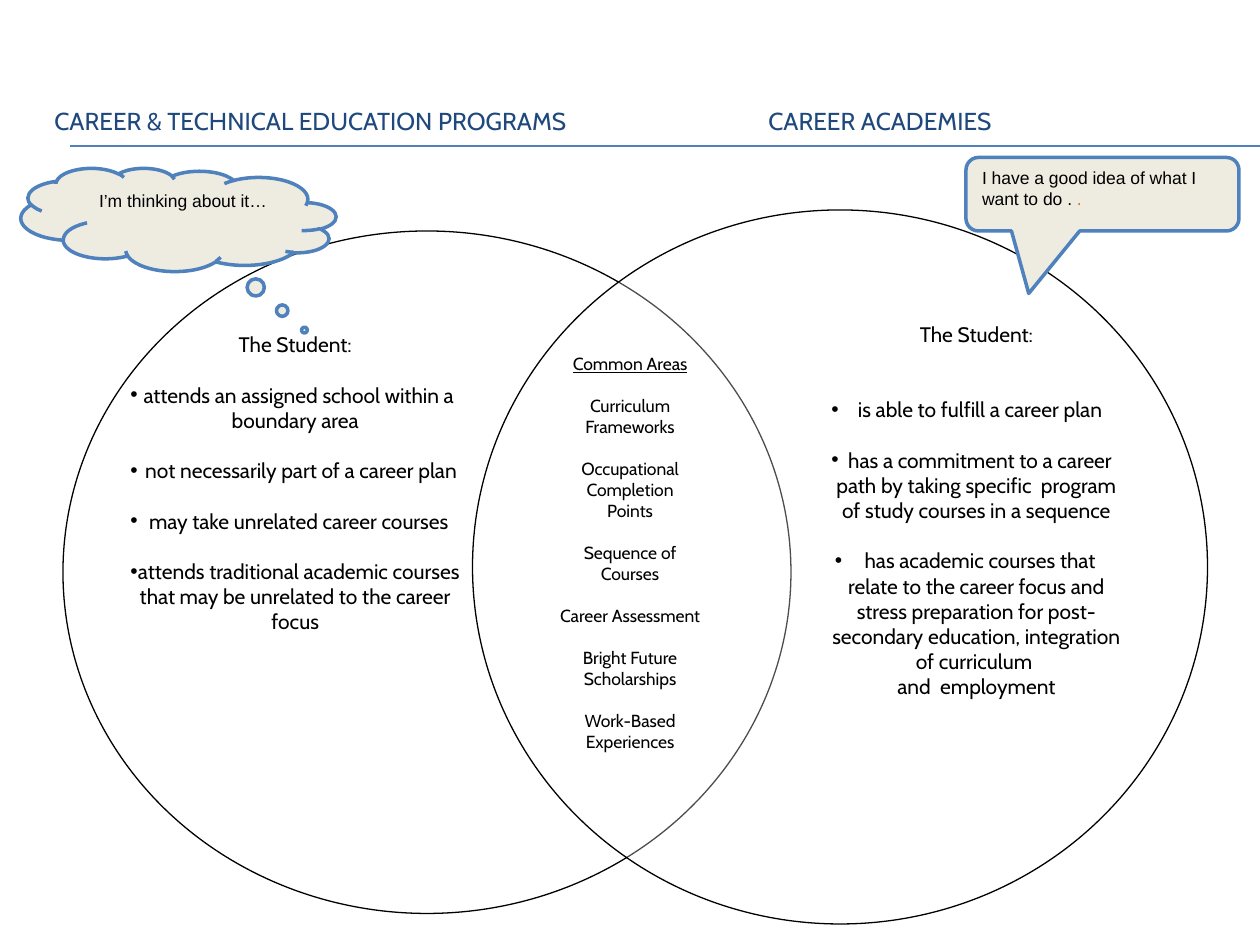
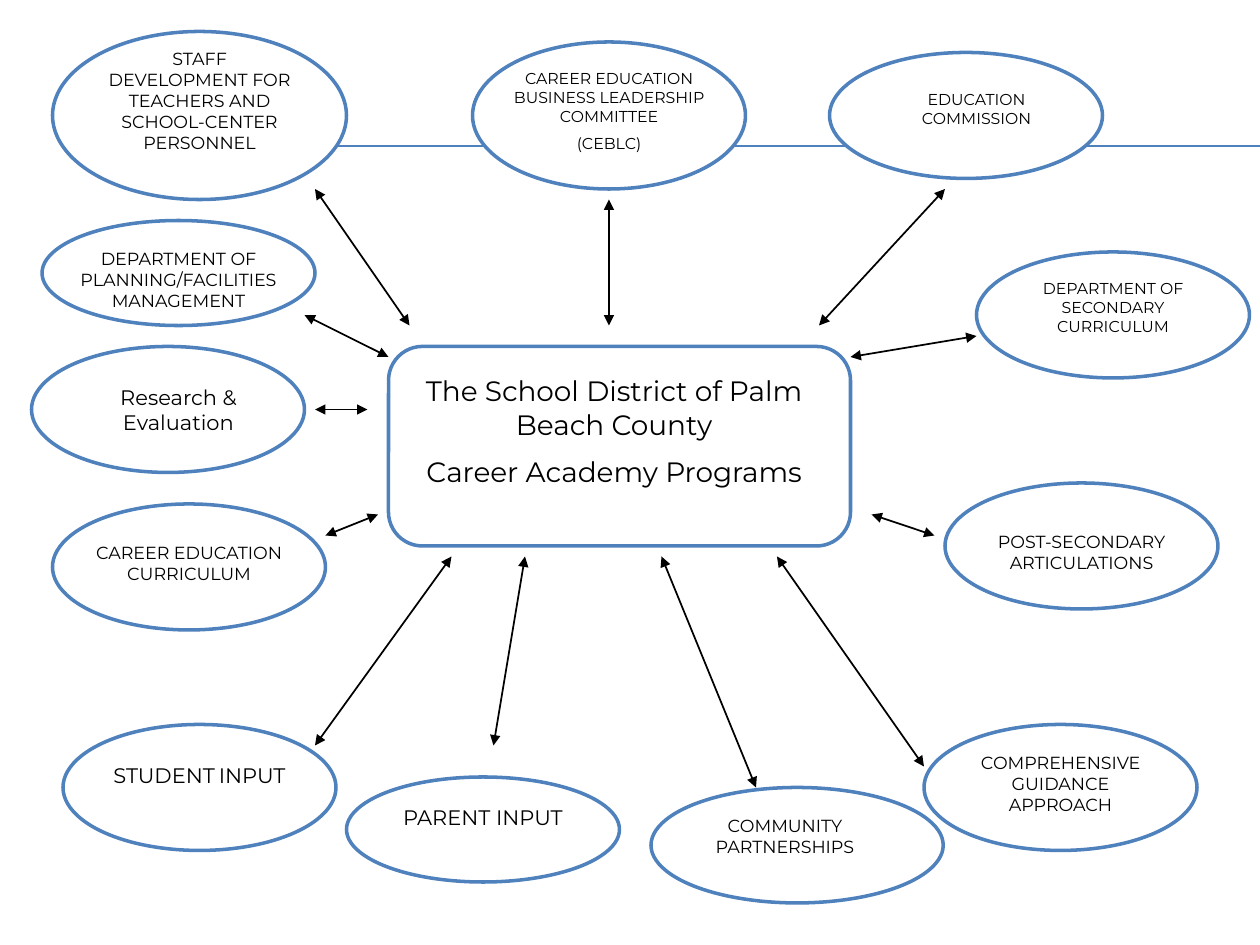
import pptx
import pptx.util
import pptx.dml.color
import pptx.enum.shapes
import pptx.enum.text
import pptx.oxml
import pptx.oxml.ns

Pt = pptx.util.Pt
RGBColor = pptx.dml.color.RGBColor
SHAPE = pptx.enum.shapes.MSO_SHAPE
ALIGN = pptx.enum.text.PP_ALIGN
ANCHOR = pptx.enum.text.MSO_ANCHOR

BLACK = RGBColor(0x00, 0x00, 0x00)
WHITE = RGBColor(0xFF, 0xFF, 0xFF)
BLUE = RGBColor(0x4F, 0x81, 0xBD)
NAVY = RGBColor(0x1F, 0x49, 0x7D)
CREAM = RGBColor(0xEE, 0xEC, 0xE1)
ORANGE = RGBColor(0xFF, 0x66, 0x00)

SLIDE_SIZE = (720, 540)
RULES = [(40, 83, 720, 83), (40, 83.5, 720, 83.5)]
STUDENT_GAP = 14.4
COMMON_GAP = 12

HEADINGS = [
    ("CAREER & TECHNICAL EDUCATION PROGRAMS", (24, 36, 684, 66)),
    ("CAREER ACADEMIES", (432, 36, 144, 66)),
]
CIRCLES = [((36, 132, 416, 390), 20), ((270, 120, 420, 408), 30)]

PROGRAM_STUDENT = [
    ("The Student:", 0, False),
    ("attends an assigned school within a boundary area", STUDENT_GAP, True),
    (" not necessarily part of a career plan", STUDENT_GAP, True),
    ("may take unrelated career courses", STUDENT_GAP, True),
    ("attends traditional academic courses that may be unrelated to the career focus",
     STUDENT_GAP, True),
]
ACADEMY_STUDENT = [
    ("The Student:", 0, False),
    ("is able to fulfill a career plan", 2 * STUDENT_GAP, True),
    ("has a commitment to a career path by taking specific  program of study "
     "courses in a sequence", STUDENT_GAP, True),
    ("has academic courses that relate to the career focus and stress preparation "
     "for post-secondary education, integration of curriculum ", STUDENT_GAP, True),
    ("and  employment", 0, False),
]
COMMON_AREAS = [
    ([("Common Areas", {"underline": True})], 0, False),
    ("Curriculum Frameworks", COMMON_GAP, False),
    ("Occupational Completion", COMMON_GAP, False),
    ("Points", 0, False),
    ("Sequence of Courses", COMMON_GAP, False),
    ("Career Assessment", COMMON_GAP, False),
    ("Bright Future Scholarships", COMMON_GAP, False),
    ("Work-Based Experiences", COMMON_GAP, False),
]
VENN_TEXTS = [
    (PROGRAM_STUDENT, (67.5, 186, 202.5, 276), 12),
    (ACADEMY_STUDENT, (468, 180, 180, 360), 12),
    (COMMON_AREAS, (312, 198, 96, 306), 10),
]
THOUGHT = [("I’m thinking about it…", 0, False)]
SPEECH = [([("I have a good idea of what I want to do .", {}),
            (" .", {"color": ORANGE})], 0, False)]

HUB_BOX = (222, 198, 264, 114)
HUB_TEXT = (["The School District of Palm Beach County", "Career Academy Programs"],
            (234, 210, 234, 94), 16)
STUDENT_INPUT = [("STUDENT", {}), (" ", {"size": Pt(8)}), ("INPUT", {})]
PARTNERS = [
    (["STAFF DEVELOPMENT FOR TEACHERS AND SCHOOL-CENTER PERSONNEL"],
     (30, 18, 168, 96), (54, 24, 120, 79), 10),
    (["CAREER EDUCATION BUSINESS LEADERSHIP COMMITTEE", "(CEBLC)"],
     (270, 24, 156, 84), (282, 36, 132, 66), 9),
    (["EDUCATION COMMISSION"], (474, 30, 156, 72), (498, 48, 120, 29), 9),
    (["DEPARTMENT OF PLANNING/FACILITIES MANAGEMENT"],
     (24, 126, 156, 60), (30, 138, 144, 43), 10),
    (["Research & Evaluation"], (18, 198, 156, 72), (30, 216, 144, 36), 12),
    (["CAREER EDUCATION CURRICULUM"], (30, 288, 156, 72), (42, 306, 132, 31), 10),
    ([STUDENT_INPUT], (36, 414, 156, 72), (54, 432, 120, 36), 12),
    (["PARENT INPUT"], (198, 444, 156, 60), (216, 456, 120, 22), 12),
    (["DEPARTMENT OF SECONDARY CURRICULUM"],
     (558, 144, 156, 72), (576, 156, 120, 40), 9),
    (["POST-SECONDARY ARTICULATIONS"], (540, 276, 156, 72), (558, 300, 120, 31), 10),
    (["COMPREHENSIVE GUIDANCE APPROACH"],
     (528, 414, 156, 72), (546, 426, 120, 43), 10),
    (["COMMUNITY PARTNERSHIPS"], (372, 450, 167, 66), (384, 462, 129, 31), 10),
]
ARROWS = [
    (180, 108, 234, 186), (348, 114, 348, 186), (540, 108, 468, 186),
    (174, 180, 222, 204), (180, 234, 210, 234), (216, 294, 186, 306),
    (258, 318, 180, 426), (300, 318, 282, 426), (378, 318, 432, 450),
    (444, 318, 528, 438), (498, 294, 534, 306), (486, 204, 558, 192),
]


def points(values):
    return [Pt(value) for value in values]


def add_element(parent, tag, **attributes):
    element = pptx.oxml.parse_xml(f"<a:{tag} {pptx.oxml.ns.nsdecls('a')}/>")
    for name, value in attributes.items():
        element.set(name, value)
    parent.append(element)


def format_font(font, values):
    for name, value in values.items():
        if name == "color":
            font.color.rgb = value
        else:
            setattr(font, name, value)


def write_text(frame, paragraphs, font_name, size, color=BLACK,
               align=ALIGN.CENTER, anchor=ANCHOR.TOP):
    frame.word_wrap = True
    frame.vertical_anchor = anchor
    base = {"name": font_name, "size": Pt(size), "color": color}
    for index, (content, gap, bulleted) in enumerate(paragraphs):
        paragraph = frame.add_paragraph() if index else frame.paragraphs[0]
        paragraph.alignment = align
        paragraph.space_before = Pt(gap)
        if bulleted:
            properties = paragraph._p.get_or_add_pPr()
            add_element(properties, "buFont", typeface="Arial")
            add_element(properties, "buChar", char="•")
        runs = [(content, {})] if isinstance(content, str) else content
        for text, changes in runs:
            run = paragraph.add_run()
            run.text = text
            format_font(run.font, {**base, **changes})


def add_text(slide, box, *arguments, **options):
    frame = slide.shapes.add_textbox(*points(box)).text_frame
    write_text(frame, *arguments, **options)
    return frame


def add_outline(slide, kind, box, fill=WHITE, line=BLUE, width=2, adjustments=()):
    shape = slide.shapes.add_shape(kind, *points(box))
    shape.shadow.inherit = False
    shape.fill.solid()
    shape.fill.fore_color.rgb = fill
    shape.line.color.rgb = line
    shape.line.width = Pt(width)
    for index, value in enumerate(adjustments):
        shape.adjustments[index] = value
    return shape


def add_line(slide, ends, color, width, arrows=False):
    connector = slide.shapes.add_connector(
        pptx.enum.shapes.MSO_CONNECTOR.STRAIGHT, *points(ends))
    connector.line.color.rgb = color
    connector.line.width = Pt(width)
    if arrows:
        for tag in ("headEnd", "tailEnd"):
            add_element(connector.line._ln, tag, type="triangle")
    add_element(connector._element.spPr, "effectLst")


def add_slide(presentation):
    slide = presentation.slides.add_slide(presentation.slide_layouts[6])
    for ends in RULES:
        add_line(slide, ends, BLUE, 0.75)
    return slide


def add_circle(slide, box, opacity):
    circle = add_outline(slide, SHAPE.OVAL, box, line=BLACK, width=0.75)
    color = circle.fill._xPr.find(".//" + pptx.oxml.ns.qn("a:srgbClr"))
    add_element(color, "alpha", val=str(opacity * 1000))


def build_venn(presentation):
    slide = add_slide(presentation)
    add_circle(slide, *CIRCLES[0])
    cloud = add_outline(slide, SHAPE.CLOUD_CALLOUT, (12, 96, 180, 59), CREAM,
                        adjustments=(-0.4, 1.07))
    cloud._element.spPr.xfrm.set("flipH", "1")
    write_text(cloud.text_frame, THOUGHT, "Arial", 10, align=ALIGN.LEFT)
    add_circle(slide, *CIRCLES[1])
    for paragraphs, box, size in VENN_TEXTS:
        add_text(slide, box, paragraphs, "Cabin", size)
    speech = add_outline(slide, SHAPE.ROUNDED_RECTANGULAR_CALLOUT, (552, 90, 156, 42),
                         CREAM, adjustments=(-0.27, 1.35, 0.17))
    write_text(speech.text_frame, SPEECH, "Arial", 10, align=ALIGN.LEFT)
    for heading, box in HEADINGS:
        add_text(slide, box, [(heading, 0, False)], "Cabin", 14, NAVY,
                 ALIGN.LEFT, ANCHOR.MIDDLE)


def build_partners(presentation):
    slide = add_slide(presentation)
    add_outline(slide, SHAPE.ROUNDED_RECTANGLE, HUB_BOX, adjustments=(0.17,))
    for _, oval, _, _ in PARTNERS:
        add_outline(slide, SHAPE.OVAL, oval)
    for ends in ARROWS:
        add_line(slide, ends, BLACK, 1, arrows=True)
    labels = [(lines, box, size) for lines, _, box, size in PARTNERS]
    for lines, box, size in labels + [HUB_TEXT]:
        paragraphs = [(line, size / 2 if index else 0, False)
                      for index, line in enumerate(lines)]
        frame = add_text(slide, box, paragraphs, "Montserrat", size)
        frame.auto_size = pptx.enum.text.MSO_AUTO_SIZE.SHAPE_TO_FIT_TEXT


def main():
    presentation = pptx.Presentation()
    presentation.slide_width, presentation.slide_height = points(SLIDE_SIZE)
    build_venn(presentation)
    build_partners(presentation)
    presentation.save("out.pptx")


if __name__ == "__main__":
    main()
